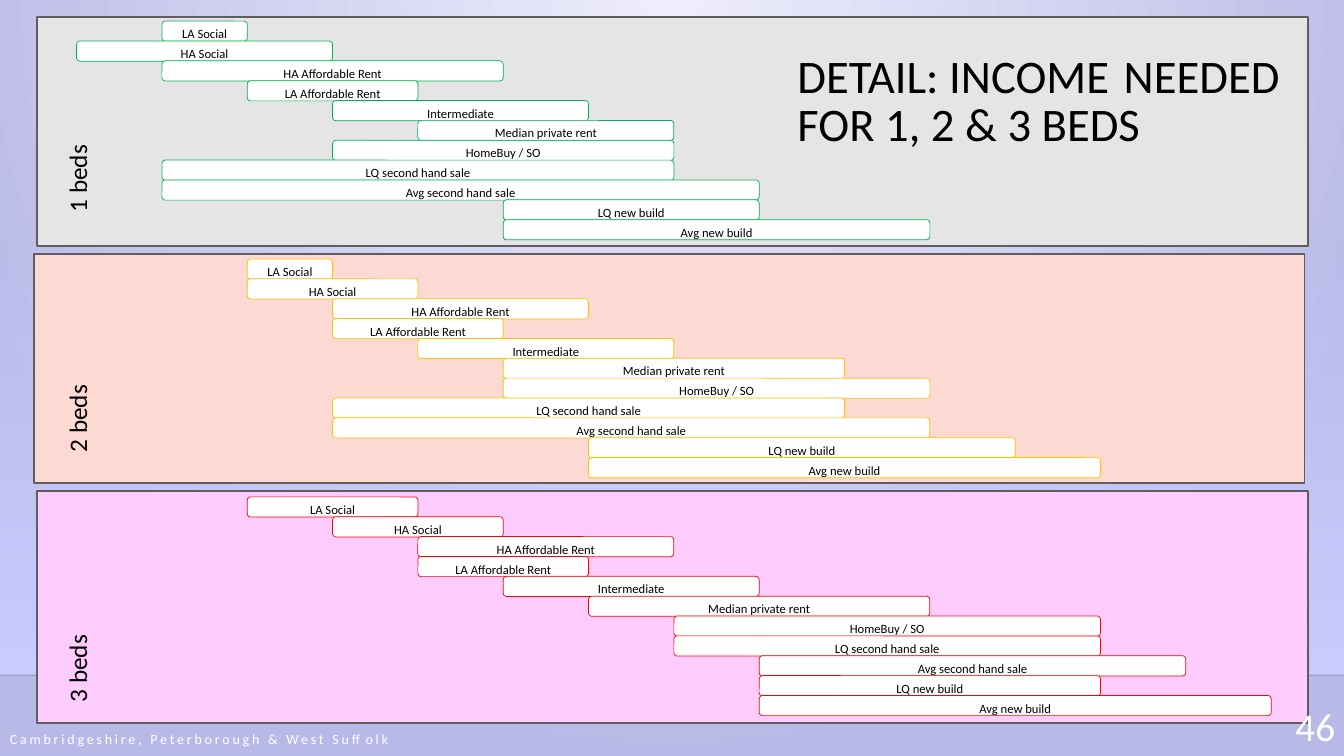
from pptx import Presentation, util as u
from pptx.dml.color import RGBColor
from pptx.enum import shapes, text
from pptx.oxml import parse_xml
from pptx.oxml.ns import nsdecls, qn

W, H = 13.33, 7.5
FONT = "Calibri"
BLACK, WHITE, GREY = "000000", "FFFFFF", "5E5E5E"

HOMES = ["LA Social", "HA Social", "HA Affordable Rent", "LA Affordable Rent",
         "Intermediate", "Median private rent", "HomeBuy / SO",
         "LQ second hand sale", "Avg second hand sale", "LQ new build",
         "Avg new build"]

# Bars hold (first income column, number of columns), in the order of HOMES
BANDS = [
    dict(name="1 beds", left=0.37, high=2.27, fill="E5E5E5", edge="00B050",
         mark=1.3,
         bars=[(1, 1), (0, 3), (1, 4), (2, 2), (3, 3), (4, 3), (3, 4),
               (1, 6), (1, 7), (5, 3), (5, 5)]),
    dict(name="2 beds", left=0.34, high=2.27, fill="FCD9D3", edge="FFC000",
         mark=3.68,
         bars=[(2, 1), (2, 2), (3, 3), (3, 2), (4, 3), (5, 4), (5, 5),
               (3, 6), (3, 7), (6, 5), (6, 6)]),
    dict(name="3 beds", left=0.37, high=2.3, fill="FFCCFF", edge="FF0000",
         mark=6.16,
         bars=[(2, 2), (3, 2), (4, 3), (4, 2), (5, 3), (6, 4), (7, 5),
               (7, 5), (8, 5), (8, 4), (8, 6)]),
]
TITLE = [("DETAIL: INCOME", 33.3), (" ", 44.4), ("NEEDED", 33.3),
         (" ", 44.4), ("FOR 1, 2 & 3 BEDS", 33.3)]
FOOT = "Cambridgeshire, Peterborough & West Suffolk"

BAND_TOP, BAND_STEP, BAND_W = 0.17, 2.35, 12.6
BAR_LEFT, BAR_TOP, BAR_STEP, BAR_H = 0.76, 0.21, 2.36, 0.2
COL, ROW = 6.77 / 8, 1.97 / 10

prs = Presentation()
prs.slide_width, prs.slide_height = u.Inches(W), u.Inches(H)
slide = prs.slides.add_slide(prs.slide_layouts[6])


def color(code):
    return RGBColor.from_string(code)


def inch(*sizes):
    return [u.Inches(n) for n in sizes]


def blend(fill, root, stops, way):
    """Set a gradient whose stops are (percent, colour, opacity)."""
    fill.gradient()
    old = root.find(".//" + qn("a:gradFill"))
    parts = "".join(
        f'<a:gs pos="{pos * 1000}"><a:srgbClr val="{code}">'
        f'<a:alpha val="{clear * 1000}"/></a:srgbClr></a:gs>'
        for pos, code, clear in stops)
    old.getparent().replace(old, parse_xml(
        f'<a:gradFill {nsdecls("a")} rotWithShape="1">'
        f'<a:gsLst>{parts}</a:gsLst>{way}</a:gradFill>'))


def box(kind, at, fill, edge, wide):
    shape = slide.shapes.add_shape(kind, *inch(*at))
    shape.shadow.inherit = False
    shape.fill.solid()
    shape.fill.fore_color.rgb = color(fill)
    shape.line.color.rgb = color(edge)
    shape.line.width = u.Pt(wide)
    return shape


def write(frame, runs, ink, align):
    frame.word_wrap = True
    para = frame.paragraphs[0]
    para.alignment = align
    for words, size in runs:
        run = para.add_run()
        run.text = words
        run.font.name, run.font.size = FONT, u.Pt(size)
        run.font.color.rgb = color(ink)
    return para


def label(at, runs, ink=WHITE, align=text.PP_ALIGN.LEFT,
          anchor=text.MSO_ANCHOR.TOP):
    shape = slide.shapes.add_textbox(*inch(*at))
    shape.text_frame.vertical_anchor = anchor
    return shape, write(shape.text_frame, runs, ink, align)


# Backdrop
blend(slide.background.fill, slide.element,
      [(0, "EDEDFD", 100), (100, "B9B9E7", 100)],
      '<a:path path="circle"><a:fillToRect l="43000" t="0" r="43000" '
      'b="100000"/></a:path>')
haze = box(shapes.MSO_SHAPE.RECTANGLE, (0, 2.21, W, 4.49), WHITE, WHITE, 1)
haze.line.fill.background()
blend(haze.fill, haze.element, [(0, "CCCCFF", 0), (100, "CCCCFF", 100)],
      '<a:lin ang="5400000" scaled="0"/>')
rule = slide.shapes.add_connector(shapes.MSO_CONNECTOR.STRAIGHT,
                                  *inch(0, 6.7, W, 6.7))
rule.line.color.rgb = color("000001")
rule.line.width = u.Pt(1)
rule.element.find(".//" + qn("a:srgbClr")).append(
    parse_xml(f'<a:alpha {nsdecls("a")} val="20000"/>'))
rule.element.spPr.append(parse_xml(f'<a:effectLst {nsdecls("a")}/>'))

# Bands with their bars
for i, band in enumerate(BANDS):
    box(shapes.MSO_SHAPE.RECTANGLE,
        (band["left"], BAND_TOP + i * BAND_STEP, BAND_W, band["high"]),
        band["fill"], GREY, 1.25)
    for row, (home, (col, span)) in enumerate(zip(HOMES, band["bars"])):
        at = (BAR_LEFT + col * COL, BAR_TOP + i * BAR_STEP + row * ROW,
              span * COL, BAR_H)
        bar = box(shapes.MSO_SHAPE.ROUNDED_RECTANGLE, at, WHITE,
                  band["edge"], 0.5)
        frame = bar.text_frame
        frame.margin_top, frame.margin_bottom = inch(0.05, 0)
        frame.vertical_anchor = text.MSO_ANCHOR.MIDDLE
        write(frame, [(home, 9)], BLACK, text.PP_ALIGN.CENTER)
    name, _ = label((0.06, band["mark"], 1.41, 0.4), [(band["name"], 18)],
                    BLACK)
    name.rotation = 270
    name.text_frame.auto_size = text.MSO_AUTO_SIZE.SHAPE_TO_FIT_TEXT

# Footer, page number and title
_, foot = label((0, 7.16, 5.44, 0.34), [(FOOT, 10)],
                anchor=text.MSO_ANCHOR.MIDDLE)
foot.runs[0].font._element.set("spc", "200")
label((12.45, 6.92, 0.89, 0.55), [("46", 28)], align=text.PP_ALIGN.RIGHT)
_, title = label((7.81, 0.1, 5.18, 1.75), TITLE, BLACK,
                 anchor=text.MSO_ANCHOR.MIDDLE)
title.line_spacing = 0.8

prs.save("out.pptx")
